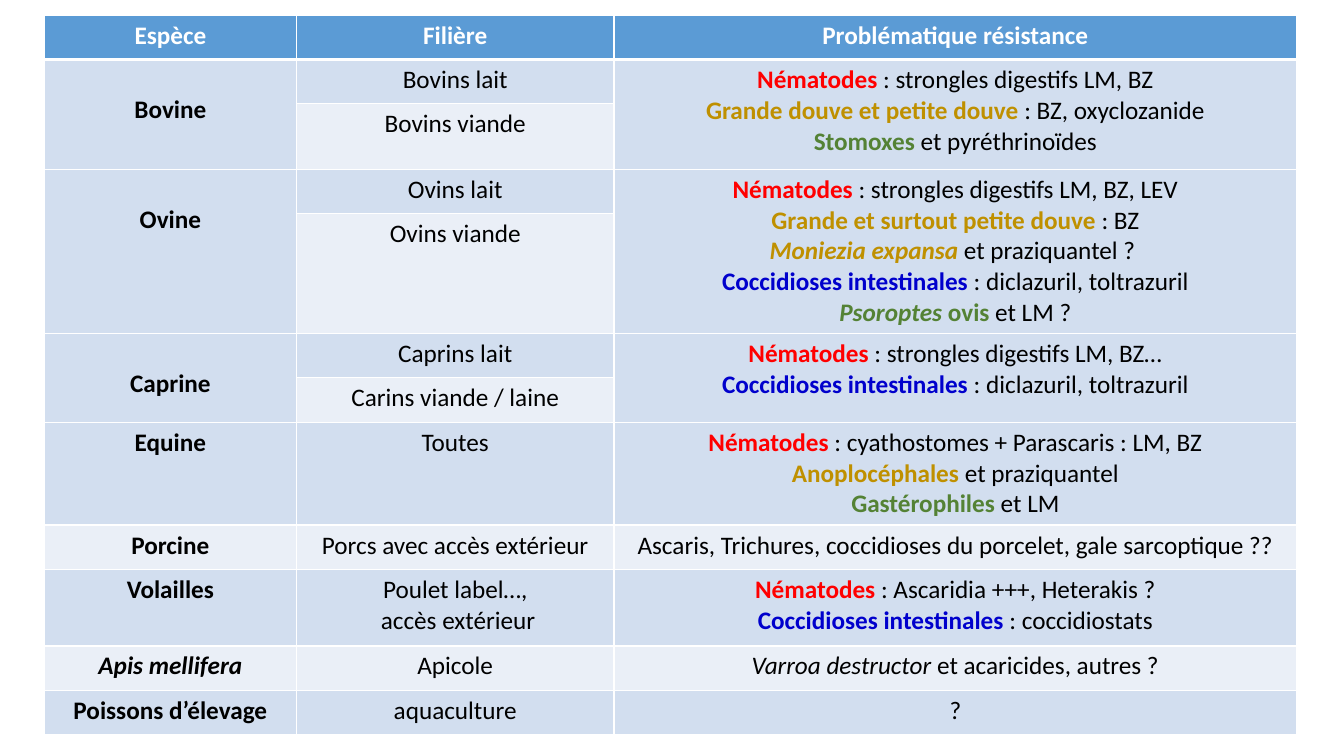
from dataclasses import dataclass

from lxml import etree
from pptx import Presentation
from pptx.dml.color import RGBColor
from pptx.enum.text import PP_ALIGN
from pptx.oxml.ns import qn
from pptx.util import Inches, Pt

CENTER = PP_ALIGN.CENTER


@dataclass(frozen=True)
class Theme:
    font: str = "Calibri"
    size: int = 18
    white: str = "FFFFFF"
    black: str = "000000"
    header: str = "5B9BD5"
    odd_band: str = "D2DEEF"
    even_band: str = "EAEFF7"
    worm: str = "FF0000"
    fluke: str = "BF9000"
    insect: str = "548235"
    coccidia: str = "0000CC"


theme = Theme()

# style: colour, bold, italic
PLAIN = (theme.black, False, False)
BOLD = (theme.black, True, False)
ITALIC = (theme.black, False, True)
BOLD_ITALIC = (theme.black, True, True)
HEADING = (theme.white, True, False)
WORM = (theme.worm, True, False)
FLUKE = (theme.fluke, True, False)
FLUKE_ITALIC = (theme.fluke, True, True)
INSECT = (theme.insect, True, False)
INSECT_ITALIC = (theme.insect, True, True)
COCCIDIA = (theme.coccidia, True, False)

COLUMN_WIDTHS = [2.5, 3.15, 6.77]
ROW_HEIGHTS = [0.44, 0.44, 0.65, 0.44, 1.19, 0.44, 0.44, 1.02, 0.44, 0.76, 0.44, 0.44]
HEADINGS = ["Espèce", "Filière", "Problématique résistance"]
COCCIDIOSES = [("Coccidioses intestinales ", COCCIDIA), (": diclazuril, toltrazuril", PLAIN)]

# species, species style, one entry per sector row, resistance lines
SPECIES = [
    ("Bovine", BOLD, [["Bovins lait"], ["Bovins viande"]], [
        [("Nématodes ", WORM), (": strongles digestifs LM, BZ", PLAIN)],
        [("Grande douve et petite douve ", FLUKE), (": BZ, oxyclozanide", PLAIN)],
        [("Stomoxes ", INSECT), ("et pyréthrinoïdes", PLAIN)],
    ]),
    ("Ovine", BOLD, [["Ovins lait"], ["Ovins viande"]], [
        [("Nématodes", WORM), (" : strongles digestifs LM, BZ, LEV", PLAIN)],
        [("Grande et surtout petite douve ", FLUKE), (": BZ", PLAIN)],
        [("Moniezia expansa ", FLUKE_ITALIC), ("et praziquantel ? ", PLAIN)],
        COCCIDIOSES,
        [("Psoroptes", INSECT_ITALIC), (" ovis ", INSECT), ("et LM ?", PLAIN)],
    ]),
    ("Caprine", BOLD, [["Caprins lait"], ["Carins viande / laine"]], [
        [("Nématodes ", WORM), (": strongles digestifs LM, BZ…", PLAIN)],
        COCCIDIOSES,
    ]),
    ("Equine", BOLD, [["Toutes"]], [
        [("Nématodes ", WORM), (": cyathostomes + Parascaris : LM, BZ", PLAIN)],
        [("Anoplocéphales", FLUKE), (" et praziquantel", PLAIN)],
        [("Gastérophiles", INSECT), (" et LM", PLAIN)],
    ]),
    ("Porcine", BOLD, [["Porcs avec accès extérieur"]], [
        [("Ascaris, Trichures, coccidioses du porcelet, gale sarcoptique ??", PLAIN)],
    ]),
    ("Volailles", BOLD, [["Poulet label…,", " accès extérieur"]], [
        [("Nématodes", WORM), (" : Ascaridia +++, Heterakis ?", PLAIN)],
        [("Coccidioses intestinales ", COCCIDIA), (": coccidiostats", PLAIN)],
    ]),
    ("Apis mellifera", BOLD_ITALIC, [["Apicole"]], [
        [("Varroa destructor ", ITALIC), ("et acaricides, autres ?", PLAIN)],
    ]),
    ("Poissons d’élevage", BOLD, [["aquaculture"]], [[("?", PLAIN)]]),
]


def write_lines(cell, lines):
    frame = cell.text_frame
    for index, line in enumerate(lines):
        para = frame.add_paragraph() if index else frame.paragraphs[0]
        para.alignment = CENTER
        para.font.name = theme.font
        para.font.size = Pt(theme.size)
        for text, (color, bold, italic) in line:
            span = para.add_run()
            span.text = text
            span.font.color.rgb = RGBColor.from_string(color)
            span.font.bold = bold
            span.font.italic = italic


def format_cell(cell, fill, top, bottom):
    properties = cell._tc.get_or_add_tcPr()
    for side, width in (("L", 1), ("R", 1), ("T", top), ("B", bottom)):
        line = etree.SubElement(properties, qn(f"a:ln{side}"), w=str(Pt(width)))
        paint = etree.SubElement(line, qn("a:solidFill"))
        etree.SubElement(paint, qn("a:srgbClr"), val=theme.white)
    cell.fill.solid()
    cell.fill.fore_color.rgb = RGBColor.from_string(fill)


deck = Presentation()
deck.slide_width = Inches(13.33)
deck.slide_height = Inches(7.5)
page = deck.slides.add_slide(deck.slide_layouts[6])

table = page.shapes.add_table(
    len(ROW_HEIGHTS), len(COLUMN_WIDTHS), Inches(0.44), Inches(0.15),
    Inches(sum(COLUMN_WIDTHS)), Inches(sum(ROW_HEIGHTS)),
).table
for column, width in zip(table.columns, COLUMN_WIDTHS):
    column.width = Inches(width)

for index, (row, height) in enumerate(zip(table.rows, ROW_HEIGHTS)):
    row.height = Inches(height)
    band = theme.odd_band if index % 2 else theme.even_band
    for cell in row.cells:
        format_cell(cell, band if index else theme.header,
                    top=3 if index == 1 else 1, bottom=1 if index else 3)

for index, heading in enumerate(HEADINGS):
    write_lines(table.cell(0, index), [[(heading, HEADING)]])

first = 1
for species, style, sectors, resistances in SPECIES:
    last = first + len(sectors) - 1
    species_cell = table.cell(first, 0)
    resistance_cell = table.cell(first, 2)
    if last > first:
        species_cell.merge(table.cell(last, 0))
        resistance_cell.merge(table.cell(last, 2))
        species_cell.margin_top = Inches(0.35)
    write_lines(species_cell, [[(species, style)]])
    for offset, sector in enumerate(sectors):
        write_lines(table.cell(first + offset, 1), [[(text, PLAIN)] for text in sector])
    write_lines(resistance_cell, resistances)
    first = last + 1

deck.save("out.pptx")
